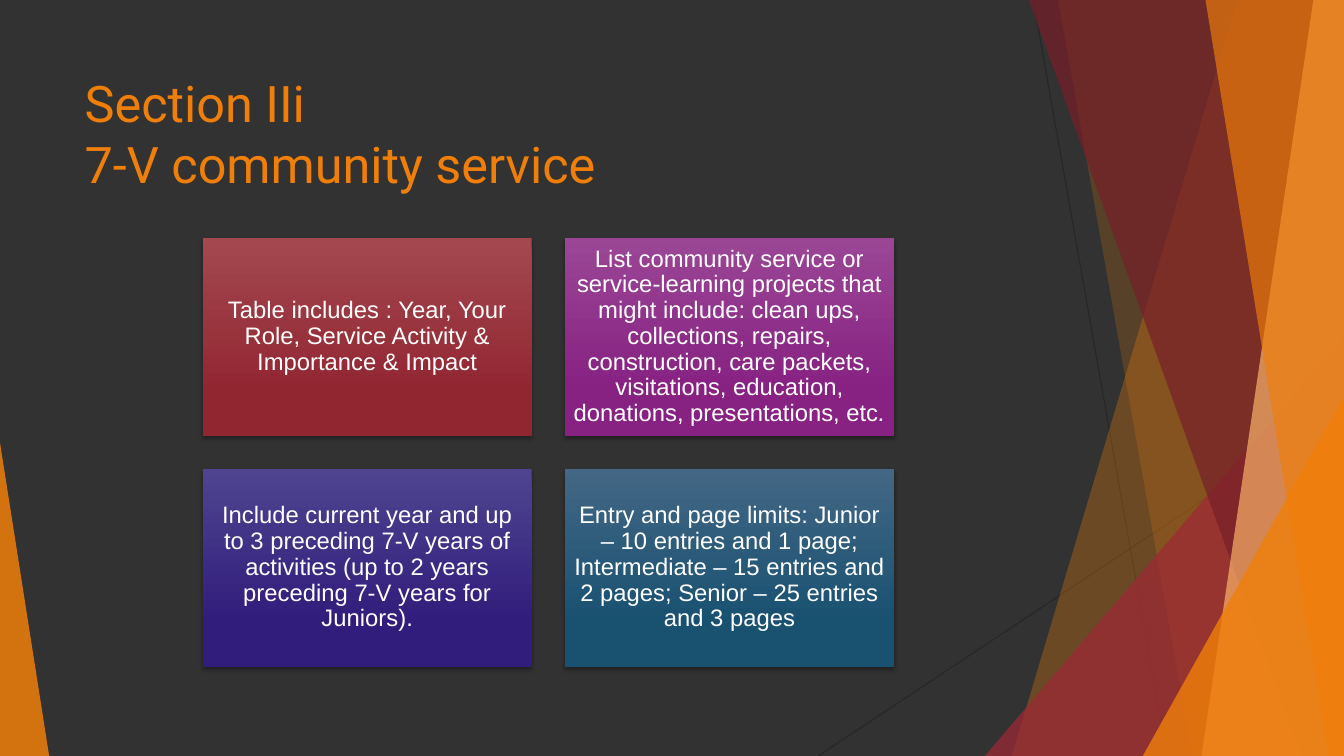
"""Build the community service slide with its four requirement boxes."""
from copy import deepcopy
from dataclasses import dataclass

from lxml.etree import SubElement
from pptx import Presentation
from pptx.dml.color import RGBColor
from pptx.enum.shapes import MSO_CONNECTOR, MSO_SHAPE
from pptx.enum.text import MSO_ANCHOR, MSO_AUTO_SIZE, PP_ALIGN
from pptx.oxml.ns import qn
from pptx.util import Cm, Pt


@dataclass
class Theme:
    background: str = "323232"
    hairline: str = "262626"
    orange: str = "F07F09"
    peach: str = "F9B268"
    red: str = "9F2936"
    maroon: str = "771F28"
    white: str = "FFFFFF"
    shadow: str = "000000"
    box_gradients: tuple = (("A4484F", "912631"), ("9A4695", "872182"),
                            ("4E448F", "311D7C"), ("436785", "195171"))
    title_font: str = "Roboto"
    title_size: int = 36
    box_font: str = "Arial"
    box_size: int = 17


theme = Theme()
WIDTH, HEIGHT = 33.87, 19.05


def paint(shape, color, opacity):
    shape.shadow.inherit = False
    shape.line.fill.background()
    shape.fill.solid()
    shape.fill.fore_color.rgb = RGBColor.from_string(color)
    fill_color = shape._element.spPr.find(qn("a:solidFill"))[0]
    SubElement(fill_color, qn("a:alpha"), val=str(opacity * 1000))


def style_span(span, font, size, color):
    for name, value in {"name": font, "size": Pt(size)}.items():
        setattr(span.font, name, value)
    span.font.color.rgb = RGBColor.from_string(color)


deck = Presentation()
deck.slide_width, deck.slide_height = Cm(WIDTH), Cm(HEIGHT)
page = deck.slides.add_slide(deck.slide_layouts[5])
page.background.fill.solid()
page.background.fill.fore_color.rgb = RGBColor.from_string(theme.background)

for ends in [(26.04, 0, 29.41, HEIGHT), (WIDTH, 10.24, 20.62, HEIGHT)]:
    hairline = page.shapes.add_connector(MSO_CONNECTOR.STRAIGHT, *map(Cm, ends))
    hairline.line.width = Pt(0.75)
    hairline.line.color.rgb = RGBColor.from_string(theme.hairline)
    SubElement(hairline._element.spPr, qn("a:effectLst"))

facets = [
    ("band", (31.19, 25.5), theme.orange, 30),
    ("band", (26.67, 30.05), theme.orange, 20),
    ("triangle", (24.82, 8.46, 9.05, 1), theme.red, 72),
    ("band", (25.93, 32.79), theme.maroon, 70),
    ("band", (33.1, 30.28), theme.peach, 70),
    ("band", (30.38, 33.48), theme.orange, 65),
    ("triangle", (28.8, 9.98, 5.07, 1), theme.orange, 80),
    ("triangle", (0, 11.15, 1.24, 0), theme.orange, 85),
]
for kind, place, color, opacity in facets:
    if kind == "band":
        top_left, bottom_left = place
        outline = page.shapes.build_freeform(Cm(top_left), 0)
        corners = [(WIDTH, 0), (WIDTH, HEIGHT), (bottom_left, HEIGHT)]
        outline.add_line_segments([(Cm(x), Cm(y)) for x, y in corners])
        facet = outline.convert_to_shape()
    else:
        left, top, width, apex = place
        facet = page.shapes.add_shape(
            MSO_SHAPE.ISOSCELES_TRIANGLE, Cm(left), Cm(top), Cm(width), Cm(HEIGHT - top))
        facet.adjustments[0] = apex
    paint(facet, color, opacity)

title = page.shapes.title
title_place = {"left": 1.88, "top": 1.7, "width": 23.88, "height": 3.66}
for name, value in title_place.items():
    setattr(title, name, Cm(value))
title_format = {"vertical_anchor": MSO_ANCHOR.TOP, "word_wrap": True,
                "auto_size": MSO_AUTO_SIZE.NONE}
for name, value in title_format.items():
    setattr(title.text_frame, name, value)
title.text_frame.text = "Section IIi\v7-V community service"
para = title.text_frame.paragraphs[0]
para.alignment = PP_ALIGN.LEFT
for span in para.runs:
    style_span(span, theme.title_font, theme.title_size, theme.orange)
para._p.find(qn("a:br")).append(deepcopy(para.runs[0]._r.rPr))

box_texts = [
    ["Table includes : Year, Your Role, Service Activity & Importance & Impact"],
    ["List community service or service-learning projects that might include: "
     "clean ups, collections, repairs, construction, care packets, visitations, "
     "education, donations, presentations, etc", "."],
    ["Include current year and up to 3 preceding 7-V years of activities "
     "(up to 2 years preceding 7-V years for Juniors)."],
    ["Entry and page limits: Junior – 10 entries and 1 page; Intermediate – "
     "15 entries and 2 pages; Senior – 25 entries and 3 pages"],
]
box_format = {"word_wrap": True, "vertical_anchor": MSO_ANCHOR.MIDDLE,
              "margin_left": Cm(0.17), "margin_right": Cm(0.17),
              "margin_top": Cm(0.17), "margin_bottom": Cm(0.17)}
for index, (gradient, texts) in enumerate(zip(theme.box_gradients, box_texts)):
    row, column = divmod(index, 2)
    box = page.shapes.add_shape(
        MSO_SHAPE.RECTANGLE, Cm(5.11 + column * 9.13), Cm(5.99 + row * 5.82),
        Cm(8.29), Cm(4.99))
    box.line.fill.background()
    box.fill.gradient()
    box.fill.gradient_angle = 270
    for stop, position, color in zip(box.fill.gradient_stops, (0, 0.78), gradient):
        stop.position = position
        stop.color.rgb = RGBColor.from_string(color)

    box.shadow.inherit = False
    effects = box._element.spPr.find(qn("a:effectLst"))
    shadow = SubElement(effects, qn("a:outerShdw"), blurRad=str(Pt(3)),
                        dist=str(Pt(2)), dir="5400000", rotWithShape="0")
    shadow_color = SubElement(shadow, qn("a:srgbClr"), val=theme.shadow)
    SubElement(shadow_color, qn("a:alpha"), val="35000")

    for name, value in box_format.items():
        setattr(box.text_frame, name, value)
    para = box.text_frame.paragraphs[0]
    para.alignment = PP_ALIGN.CENTER
    para.line_spacing = 0.9
    for order, text in enumerate(texts):
        span = para.add_run()
        span.text = text
        style_span(span, theme.box_font, theme.box_size, theme.white)
        if order:
            span.font.italic = True

deck.save("out.pptx")
